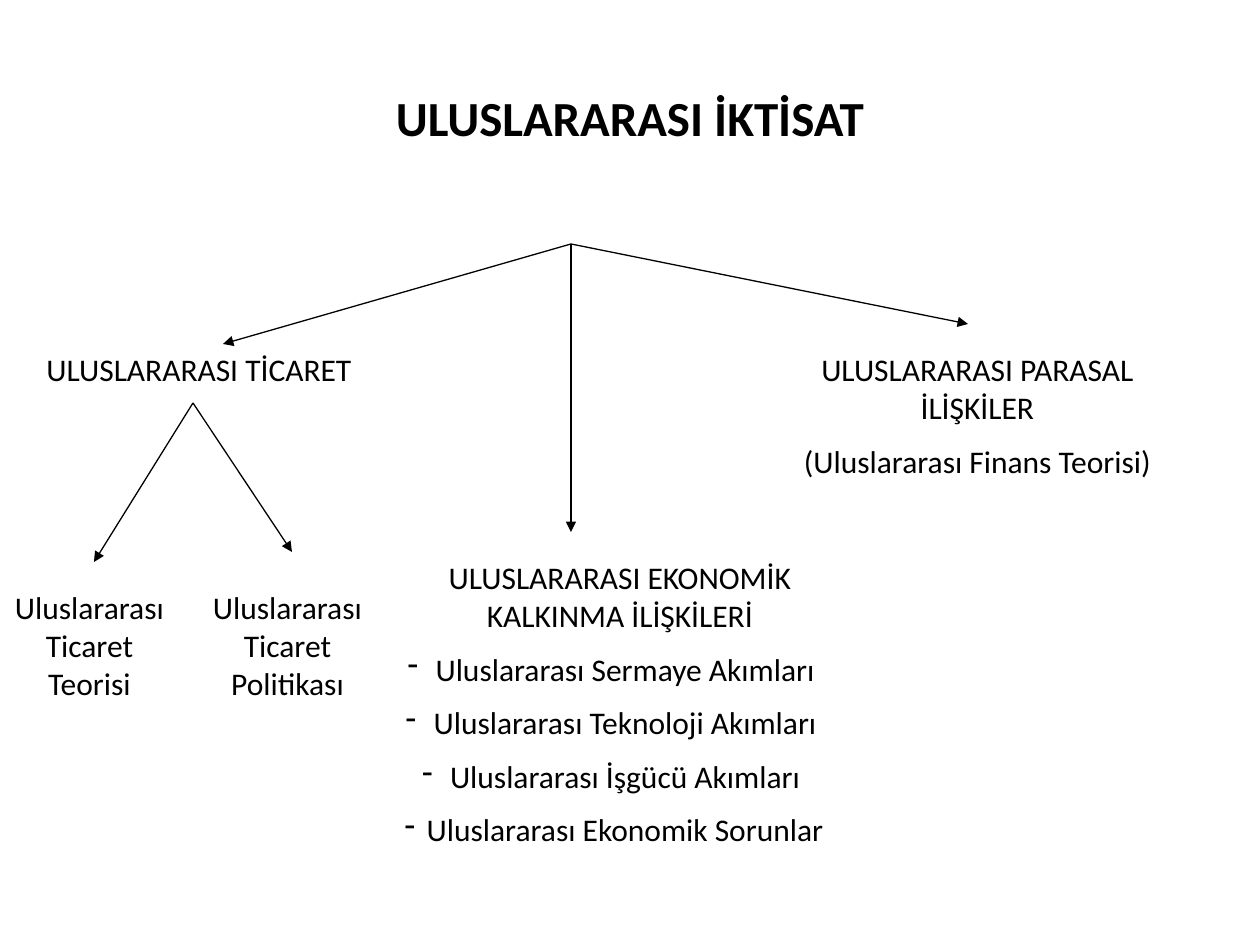
from lxml import etree
from pptx import Presentation
from pptx import util as u
from pptx.dml.color import RGBColor
from pptx.enum import shapes, text
from pptx.oxml import ns

SCALE = 914400 / 126
BLACK = RGBColor(0, 0, 0)
LEFT, MID = text.PP_ALIGN.LEFT, text.PP_ALIGN.CENTER
HEAD = {"name": "Calibri", "size": u.Pt(28), "bold": True}
BODY = {"name": "Calibri", "size": u.Pt(18), "bold": False}
FRAME = {"word_wrap": True, "auto_size": text.MSO_AUTO_SIZE.SHAPE_TO_FIT_TEXT}
ROOT, TRADE = (571, 244), (193, 403)
ARROWS = [
    (ROOT, (223, 344)),
    (ROOT, (968, 324)),
    (ROOT, (571, 532)),
    (TRADE, (94, 562)),
    (TRADE, (292, 552)),
]
LABELS = [
    ((34, 344, 397, 50), LEFT, ["ULUSLARARASI TİCARET"]),
    ((0, 582, 179, 127), MID, ["Uluslararası Ticaret Teorisi"]),
    ((193, 582, 189, 127), MID, ["Uluslararası Ticaret Politikası"]),
    ((769, 344, 417, 152), MID,
     ["ULUSLARARASI PARASAL İLİŞKİLER", "(Uluslararası Finans Teorisi)"]),
]
GROWTH = (392, 552, 456, 318)
TOPIC = "ULUSLARARASI EKONOMİK KALKINMA İLİŞKİLERİ"
FLOWS = [
    ("Uluslararası Sermaye Akımları", 28),
    ("Uluslararası Teknoloji Akımları", 28),
    ("Uluslararası İşgücü Akımları", 28),
    ("Uluslararası Ekonomik Sorunlar", 22),
]


def px(num):
    return u.Emu(round(num * SCALE))


def apply(obj, vals):
    for key, val in vals.items():
        setattr(obj, key, val)


def write(para, words, look, align=MID):
    para.alignment = align
    run = para.add_run()
    run.text = words
    apply(run.font, look)
    run.font.color.rgb = BLACK


def add_title(slide, words):
    title = slide.shapes.title
    apply(title, dict(zip(("left", "top", "width", "height"),
                          map(px, (63, 38, 1134, 158)))))
    frame = title.text_frame
    frame.vertical_anchor = text.MSO_ANCHOR.MIDDLE
    write(frame.paragraphs[0], words, HEAD)


def add_label(slide, box, align, lines):
    frame = slide.shapes.add_textbox(*map(px, box)).text_frame
    apply(frame, FRAME)
    for i, words in enumerate(lines):
        para = frame.add_paragraph() if i else frame.paragraphs[0]
        if i:
            para.space_before = u.Pt(9)
        write(para, words, BODY, align)
    return frame


def add_dash(para, hang):
    props = para._p.get_or_add_pPr()
    props.set("marL", str(px(10)))
    props.set("indent", str(px(-hang)))
    etree.SubElement(props, ns.qn("a:buChar")).set("char", "-")


def add_list(slide, box, topic, items):
    frame = add_label(slide, box, MID, [topic] + [words for words, _ in items])
    for para, (_, hang) in zip(frame.paragraphs[1:], items):
        add_dash(para, hang)


def add_arrow(slide, start, end):
    line = slide.shapes.add_connector(
        shapes.MSO_CONNECTOR.STRAIGHT, *map(px, start + end))
    line.line.color.rgb = BLACK
    line.line.width = u.Pt(0.75)
    tail = etree.SubElement(line.line._get_or_add_ln(), ns.qn("a:tailEnd"))
    tail.set("type", "triangle")
    etree.SubElement(line._element.spPr, ns.qn("a:effectLst"))


def main():
    deck = Presentation()
    apply(deck, {"slide_width": px(1260), "slide_height": px(945)})
    slide = deck.slides.add_slide(deck.slide_layouts[5])
    add_title(slide, "ULUSLARARASI İKTİSAT")
    for start, end in ARROWS:
        add_arrow(slide, start, end)
    for box, align, lines in LABELS:
        add_label(slide, box, align, lines)
    add_list(slide, GROWTH, TOPIC, FLOWS)
    deck.save("out.pptx")


if __name__ == "__main__":
    main()
